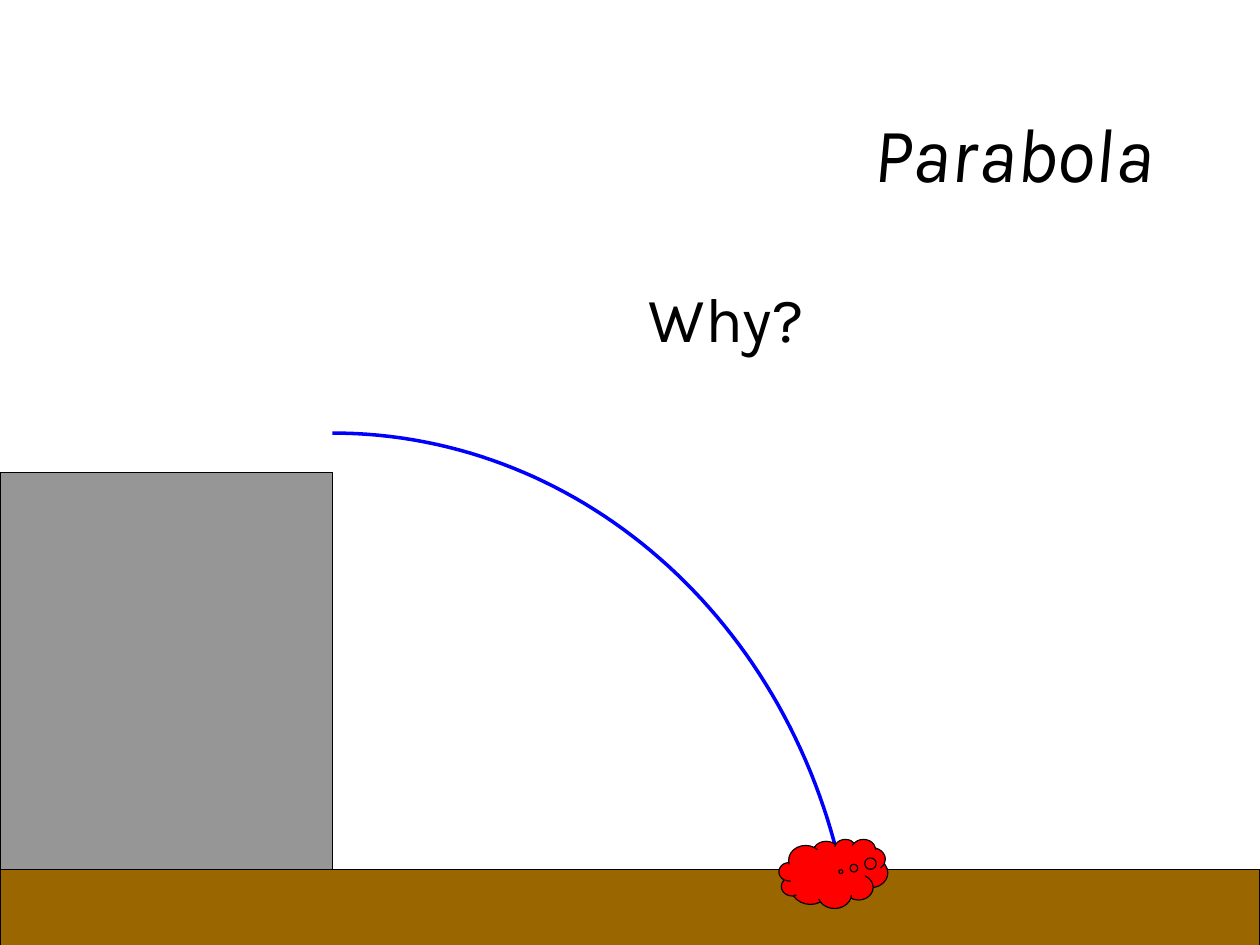
from pptx import Presentation
from pptx import util as u
from pptx.dml.color import RGBColor
from pptx.enum import shapes, text
from pptx.oxml import parse_xml
from pptx.oxml.ns import nsdecls, qn

Pt = u.Pt
BLACK = "000000"


def rgb(value):
    return RGBColor.from_string(value)


def apply(obj, formats):
    for name, value in formats.items():
        setattr(obj, name, value)


def place(sp, box):
    apply(sp, dict(zip(("left", "top", "width", "height"), map(Pt, box))))


def outline(sp, color, width):
    sp.line.color.rgb = rgb(color)
    sp.line.width = Pt(width)


def shadow_text(r):
    effect = parse_xml(
        f'<a:effectLst {nsdecls("a")}><a:outerShdw dist="35921" dir="2700000">'
        '<a:srgbClr val="969696"/></a:outerShdw></a:effectLst>')
    r.font.fill._xPr.find(qn("a:solidFill")).addnext(effect)


def fill_placeholder(sp, box, words, size, align, anchor, italic=False):
    place(sp, box)
    tf = sp.text_frame
    apply(tf, {"word_wrap": True, "auto_size": text.MSO_AUTO_SIZE.NONE,
               "vertical_anchor": anchor,
               "margin_left": Pt(8), "margin_right": Pt(8),
               "margin_top": Pt(4), "margin_bottom": Pt(4)})
    p = tf.paragraphs[0]
    p.alignment = align
    r = p.add_run()
    r.text = words
    apply(r.font, {"name": "Karla", "size": Pt(size), "italic": italic})
    r.font.color.rgb = rgb(BLACK)
    shadow_text(r)
    return p


def remove_bullet(p, indent):
    pPr = p._p.get_or_add_pPr()
    pPr.set("marL", str(Pt(indent)))
    pPr.set("indent", str(-Pt(indent)))
    pPr.append(parse_xml(f'<a:buNone {nsdecls("a")}/>'))


def add_solid(s, kind, box, color):
    sp = s.shapes.add_shape(kind, *map(Pt, box))
    sp.shadow.inherit = False
    sp.fill.solid()
    sp.fill.fore_color.rgb = rgb(color)
    outline(sp, BLACK, 0.75)
    return sp


def bezier(points, t):
    weights = ((1 - t) ** 3, 3 * t * (1 - t) ** 2, 3 * t * t * (1 - t), t ** 3)
    return tuple(Pt(sum(w * c for w, c in zip(weights, axis)))
                 for axis in zip(*points))


def add_trajectory(s, points, color, steps=60):
    curve = [bezier(points, i / steps) for i in range(steps + 1)]
    fb = s.shapes.build_freeform(*curve[0])
    fb.add_line_segments(curve[1:], close=False)
    sp = fb.convert_to_shape()
    sp.shadow.inherit = False
    sp.fill.background()
    outline(sp, color, 2.25)
    sp.line._get_or_add_ln().append(
        parse_xml(f'<a:tailEnd {nsdecls("a")} type="triangle"/>'))


def main():
    prs = Presentation()
    apply(prs, {"slide_width": Pt(800), "slide_height": Pt(600)})
    s = prs.slides.add_slide(prs.slide_layouts[1])
    title, body = s.placeholders
    fill_placeholder(title, (200, 40, 540, 113), "Parabola", 49,
                     text.PP_ALIGN.RIGHT, text.MSO_ANCHOR.MIDDLE, italic=True)
    p = fill_placeholder(body, (206.6, 173.5, 509, 360), "Why?", 40,
                         text.PP_ALIGN.CENTER, text.MSO_ANCHOR.TOP)
    remove_bullet(p, 30)

    kinds = shapes.MSO_SHAPE
    add_solid(s, kinds.RECTANGLE, (0, 300, 211, 252), "969696")
    add_solid(s, kinds.RECTANGLE, (0, 552, 800, 63.4), "996600")
    add_trajectory(s, ((211, 275), (361.4, 275), (492.5, 384.5), (532, 543.6)),
                   "0000FF")
    impact = add_solid(s, kinds.CLOUD_CALLOUT, (494.6, 532.8, 69.1, 43.9), "FF0000")
    impact.adjustments[0] = 0.07
    impact.adjustments[1] = -0.03
    prs.save("out.pptx")


if __name__ == "__main__":
    main()
